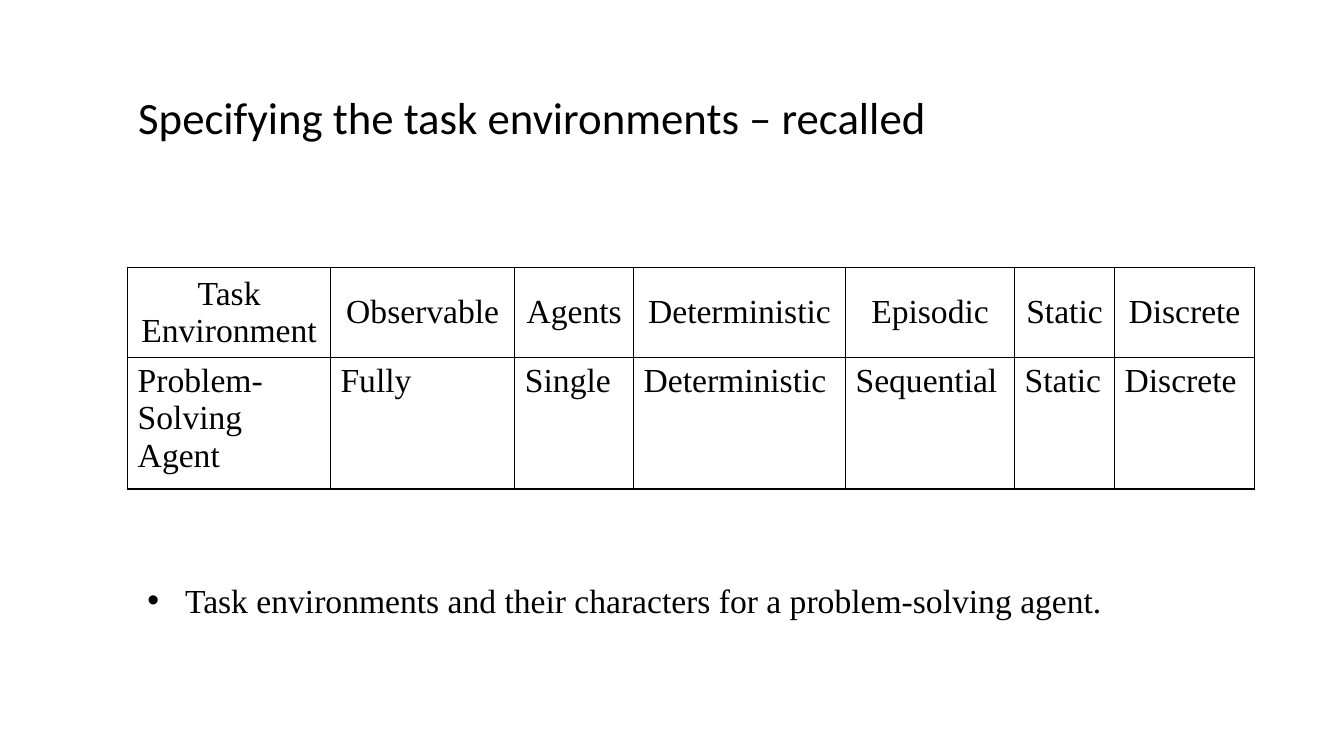
from lxml.etree import SubElement
from pptx import Presentation
from pptx.dml.color import RGBColor
from pptx.enum.text import MSO_ANCHOR as ANCHOR, MSO_AUTO_SIZE as AUTO, PP_ALIGN as ALIGN
from pptx.oxml.ns import qn
from pptx.util import Pt

COLORS = {"ink": "000000", "paper": "FFFFFF"}
SERIF = "Times New Roman"


def write(tf, text, font=SERIF, size=24, align=ALIGN.LEFT, anchor=ANCHOR.TOP,
          spacing=1.0, bullet=None, indent=27):
    """Fill a text frame with one formatted paragraph."""
    tf.word_wrap = True
    tf.vertical_anchor = anchor
    p = tf.paragraphs[0]
    p.alignment, p.line_spacing, p.space_before = align, spacing, Pt(0)
    if bullet:
        pPr = p._p.get_or_add_pPr()
        pPr.set("marL", str(Pt(indent)))
        pPr.set("indent", str(-Pt(indent)))
        SubElement(pPr, qn("a:buFont"), typeface="Arial")
        SubElement(pPr, qn("a:buChar"), char=bullet)
    r = p.add_run()
    r.text = text
    r.font.name, r.font.size = font, Pt(size)
    r.font.color.rgb = RGBColor.from_string(COLORS["ink"])


def place(sp, left, top, width, height):
    sp.left, sp.top, sp.width, sp.height = Pt(left), Pt(top), Pt(width), Pt(height)


prs = Presentation()
prs.slide_width, prs.slide_height = Pt(960), Pt(540)
slide = prs.slides.add_slide(prs.slide_layouts[1])

# Title
title = slide.shapes.title
place(title, 91.5, 52, 607.5, 67)
write(title.text_frame, "Specifying the task environments – recalled",
      font="Calibri", size=32, anchor=ANCHOR.MIDDLE, spacing=0.9)
title.text_frame.auto_size = AUTO.NONE

# Table of environment properties
ROWS = [
    ["Task Environment", "Observable", "Agents", "Deterministic",
     "Episodic", "Static", "Discrete"],
    ["Problem-Solving Agent", "Fully", "Single", "Deterministic",
     "Sequential", "Static", "Discrete"],
]
COL_WIDTHS = [144.9, 131.7, 84.8, 151.4, 120.8, 71.4, 100]
ROW_HEIGHTS = [60.2, 87]

table = slide.shapes.add_table(len(ROWS), len(COL_WIDTHS), Pt(91.2), Pt(190.8),
                               Pt(sum(COL_WIDTHS)), Pt(sum(ROW_HEIGHTS))).table
table.first_row = table.horz_banding = False
for col, width in zip(table.columns, COL_WIDTHS):
    col.width = Pt(width)

for i, (values, height) in enumerate(zip(ROWS, ROW_HEIGHTS)):
    table.rows[i].height = Pt(height)
    header = i == 0
    for j, value in enumerate(values):
        cell = table.cell(i, j)
        write(cell.text_frame, value, align=ALIGN.CENTER if header else ALIGN.LEFT)
        cell.vertical_anchor = ANCHOR.MIDDLE if header else ANCHOR.TOP
        # Thin border on all four sides
        tcPr = cell._tc.get_or_add_tcPr()
        for side in ("lnL", "lnR", "lnT", "lnB"):
            ln = SubElement(tcPr, qn(f"a:{side}"), w=str(Pt(1)))
            SubElement(SubElement(ln, qn("a:solidFill")), qn("a:srgbClr"), val=COLORS["ink"])
        cell.fill.solid()
        cell.fill.fore_color.rgb = RGBColor.from_string(COLORS["paper"])

# Bulleted caption
body = slide.placeholders[1]
place(body, 98, 410.5, 787, 36)
write(body.text_frame, "Task environments and their characters for a problem-solving agent.",
      bullet="•")
body.text_frame.auto_size = AUTO.SHAPE_TO_FIT_TEXT

prs.save("out.pptx")
